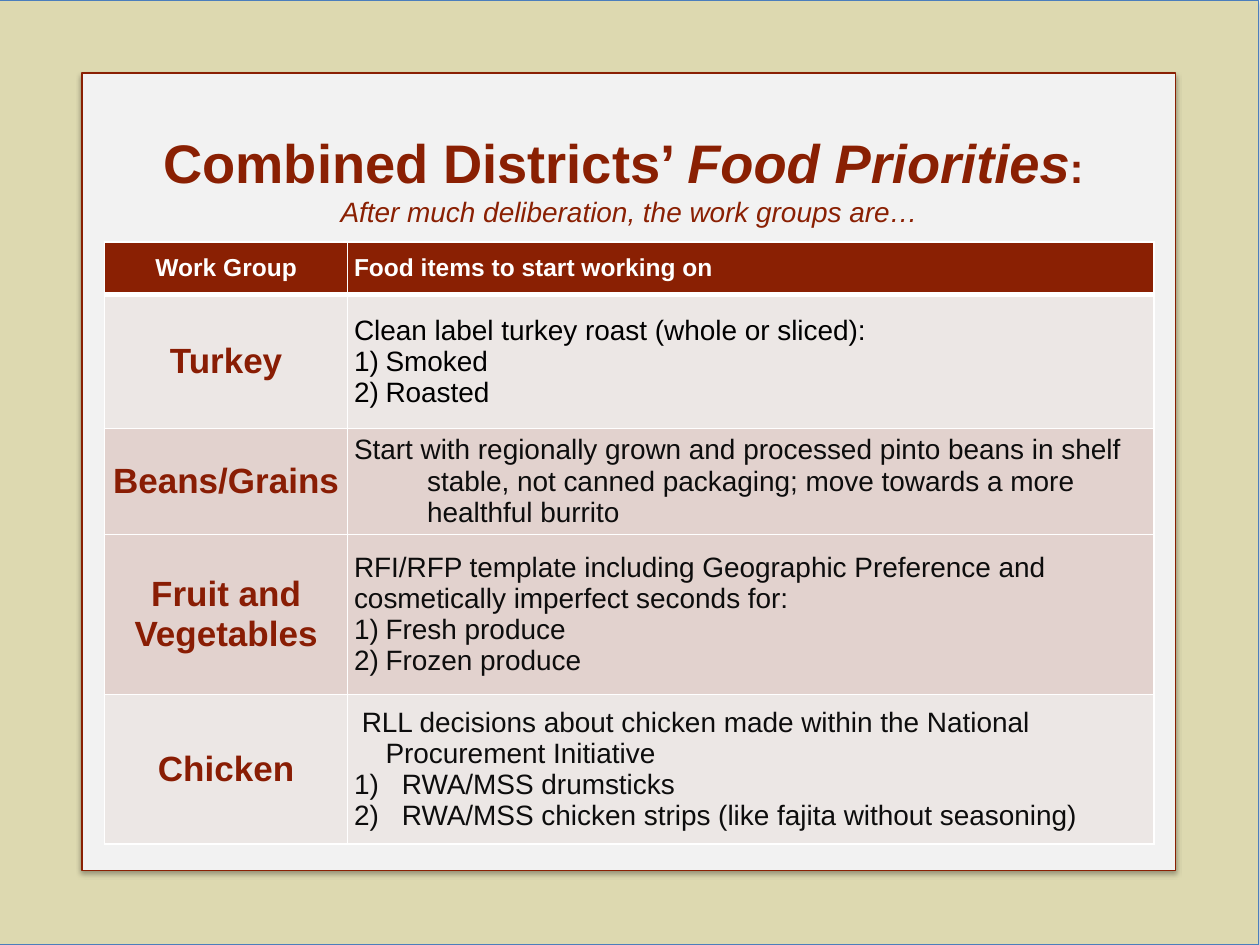
"""Build the slide of food priorities by work group."""
from dataclasses import dataclass
from typing import Any

import lxml.etree
import pptx
import pptx.dml.color
import pptx.enum.shapes
import pptx.enum.text
import pptx.oxml
import pptx.oxml.ns
import pptx.util

Inches = pptx.util.Inches
Pt = pptx.util.Pt
qn = pptx.oxml.ns.qn
ALIGN = pptx.enum.text.PP_ALIGN
MIDDLE = pptx.enum.text.MSO_ANCHOR.MIDDLE

MAROON, BRICK, WHITE = "8A2003", "891D04", "FFFFFF"
BLACK, CHARCOAL = "000000", "0D0D0D"
LIGHT, DARK = 5, 15
LEFT, WIDTH = 0.83, 8.33


@dataclass
class Line:
    text: str
    hang: float = 0
    numbered: bool = False


@dataclass
class WorkGroup:
    name: str
    height: float
    tint: int
    items: list[Line]
    ink: str = CHARCOAL


@dataclass
class Panel:
    left: float
    top: float
    width: float
    height: float
    fill: str
    outline: str


PANELS = [
    Panel(-0.01, 0, 10, 7.5, "DDD9B0", "4B7EBC"),
    Panel(0.65, 0.58, 8.68, 6.33, "F2F2F2", MAROON),
]

WORK_GROUPS = [
    WorkGroup("Turkey", 1.06, LIGHT, [
        Line("Clean label turkey roast (whole or sliced):"),
        Line("Smoked", 0.25, True),
        Line("Roasted", 0.25, True),
    ], BLACK),
    WorkGroup("Beans/Grains", 0.84, DARK, [
        Line("Start with regionally grown and processed pinto beans in shelf stable, "
             "not canned packaging; move towards a more healthful burrito", 0.58),
    ]),
    WorkGroup("Fruit and Vegetables", 1.27, DARK, [
        Line("RFI/RFP template including Geographic Preference and "
             "cosmetically imperfect seconds for:"),
        Line("Fresh produce", 0.25, True),
        Line("Frozen produce", 0.25, True),
    ]),
    WorkGroup("Chicken", 1.19, LIGHT, [
        Line(" RLL decisions about chicken made within the National "
             "Procurement Initiative", 0.25),
        Line("RWA/MSS drumsticks", 0.38, True),
        Line("RWA/MSS chicken strips (like fajita without seasoning)", 0.38, True),
    ]),
]


def rgb(value: str) -> pptx.dml.color.RGBColor:
    return pptx.dml.color.RGBColor.from_string(value)


def set_all(target: Any, values: dict[str, Any]) -> None:
    for name, value in values.items():
        setattr(target, name, value)


def add_run(paragraph: Any, text: str, size: float, color: str,
            bold: bool = False, italic: bool = False) -> None:
    run = paragraph.add_run()
    run.text = text
    set_all(run.font, {"name": "Arial", "size": Pt(size), "bold": bold, "italic": italic})
    run.font.color.rgb = rgb(color)


def draw_panel(slide: Any, panel: Panel) -> None:
    rectangle = slide.shapes.add_shape(
        pptx.enum.shapes.MSO_SHAPE.RECTANGLE, Inches(panel.left), Inches(panel.top),
        Inches(panel.width), Inches(panel.height))
    rectangle.fill.solid()
    rectangle.fill.fore_color.rgb = rgb(panel.fill)
    rectangle.line.color.rgb = rgb(panel.outline)
    rectangle.line.width = Pt(0.75)
    rectangle.shadow.inherit = False
    effects = rectangle._element.spPr.find(qn("a:effectLst"))
    shadow = lxml.etree.SubElement(
        effects, qn("a:outerShdw"), blurRad=str(Pt(3.1)), dist=str(Pt(1.8)),
        dir="5400000", rotWithShape="0")
    shade = lxml.etree.SubElement(shadow, qn("a:srgbClr"), val=BLACK)
    lxml.etree.SubElement(shade, qn("a:alpha"), val="35000")


def format_cell(cell: Any, fill: str, opacity: int, top: float = 1, bottom: float = 1) -> None:
    margins = ("margin_left", "margin_right", "margin_top", "margin_bottom")
    set_all(cell, dict.fromkeys(margins, Inches(0.05)) | {"vertical_anchor": MIDDLE})
    cell.fill.solid()
    cell.fill.fore_color.rgb = rgb(fill)
    properties = cell._tc.get_or_add_tcPr()
    if opacity < 100:
        tint = properties.find(qn("a:solidFill")).find(qn("a:srgbClr"))
        lxml.etree.SubElement(tint, qn("a:alpha"), val=str(opacity * 1000))
    sides = {"a:lnL": 1, "a:lnR": 1, "a:lnT": top, "a:lnB": bottom}
    for position, (side, width) in enumerate(sides.items()):
        border = pptx.oxml.ns.qn(side)
        edge = lxml.etree.Element(border, w=str(Pt(width)))
        solid = lxml.etree.SubElement(edge, qn("a:solidFill"))
        lxml.etree.SubElement(solid, qn("a:srgbClr"), val=WHITE)
        properties.insert(position, edge)


def write_lines(cell: Any, lines: list[Line], size: float, color: str,
                bold: bool = False, align: Any = ALIGN.LEFT) -> None:
    frame = cell.text_frame
    for index, line in enumerate(lines):
        paragraph = frame.add_paragraph() if index else frame.paragraphs[0]
        paragraph.alignment = align
        add_run(paragraph, line.text, size, color, bold)
        properties = paragraph._p.get_or_add_pPr()
        if line.hang:
            properties.set("marL", str(Inches(line.hang)))
            properties.set("indent", str(-Inches(line.hang)))
        if line.numbered:
            lxml.etree.SubElement(properties, qn("a:buAutoNum"), type="arabicParenR")


def draw_title(slide: Any) -> None:
    title = slide.shapes.title
    set_all(title, {"left": Inches(LEFT), "top": Inches(0.92),
                    "width": Inches(WIDTH), "height": Inches(1)})
    set_all(title.text_frame, {"word_wrap": True, "vertical_anchor": MIDDLE})
    heading = title.text_frame.paragraphs[0]
    heading.alignment = ALIGN.CENTER
    add_run(heading, "Combined Districts’ ", 31, MAROON, bold=True)
    add_run(heading, "Food Priorities", 31, MAROON, bold=True, italic=True)
    add_run(heading, ": ", 24, MAROON, bold=True)
    heading.add_line_break()
    add_run(heading, "After much deliberation, the work groups are…", 16, MAROON, italic=True)
    slide.shapes._spTree.append(title._element)


def draw_priorities(slide: Any) -> None:
    heights = [0.42] + [group.height for group in WORK_GROUPS]
    table = slide.shapes.add_table(
        len(heights), 2, Inches(LEFT), Inches(1.92), Inches(WIDTH),
        Inches(sum(heights))).table
    table.horz_banding = False
    for column, width in zip(table.columns, (1.93, 6.4)):
        column.width = Inches(width)
    for row, height in zip(table.rows, heights):
        row.height = Inches(height)

    headings = {"Work Group": ALIGN.CENTER, "Food items to start working on": ALIGN.LEFT}
    for cell, (text, align) in zip(table.rows[0].cells, headings.items()):
        format_cell(cell, MAROON, 100, bottom=3)
        write_lines(cell, [Line(text)], 14, WHITE, True, align)

    for index, group in enumerate(WORK_GROUPS, start=1):
        name, items = table.rows[index].cells
        for cell in (name, items):
            format_cell(cell, BRICK, group.tint, top=3 if index == 1 else 1)
        write_lines(name, [Line(group.name)], 20, BRICK, True, ALIGN.CENTER)
        write_lines(items, group.items, 16, group.ink)


def main() -> None:
    deck = pptx.Presentation()
    set_all(deck, {"slide_width": Inches(10), "slide_height": Inches(7.5)})
    slide = deck.slides.add_slide(deck.slide_layouts[5])
    for panel in PANELS:
        draw_panel(slide, panel)
    draw_priorities(slide)
    draw_title(slide)
    deck.save("out.pptx")


if __name__ == "__main__":
    main()
